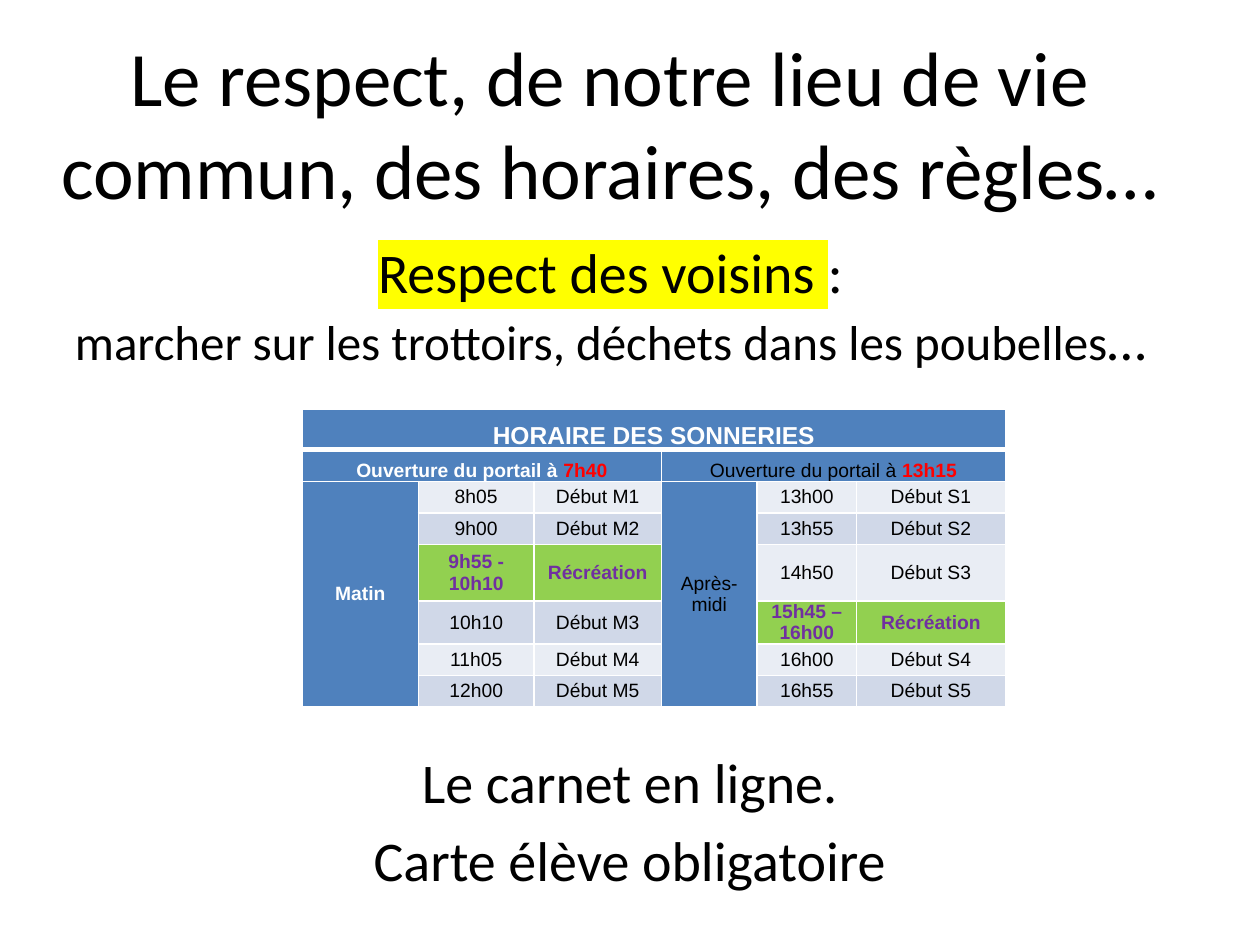
"""Builds the school slide on respect, bell times and rules."""
from lxml import etree
from pptx import Presentation, util as u
from pptx.dml.color import RGBColor
from pptx.enum import text
from pptx.oxml import ns

COLOURS = {
    "ink": "000000", "white": "FFFFFF", "header": "4F81BD", "alert": "FF0000",
    "light": "E9EDF4", "dark": "D0D8E8", "break": "92D050",
    "break_text": "7030A0", "marker": "FFFF00",
}
BREAK = "Récréation"
MORNING = [("8h05", "Début M1"), ("9h00", "Début M2"), ("9h55 - 10h10", BREAK),
           ("10h10", "Début M3"), ("11h05", "Début M4"), ("12h00", "Début M5")]
AFTERNOON = [("13h00", "Début S1"), ("13h55", "Début S2"), ("14h50", "Début S3"),
             ("15h45 – 16h00", BREAK), ("16h00", "Début S4"), ("16h55", "Début S5")]
COLUMNS = [0.92, 0.92, 1.01, 0.76, 0.79, 1.18]
ROWS = [0.32, 0.25, 0.25, 0.25, 0.45, 0.25, 0.25, 0.25]


class Slide:
    """Holds the style and the current page."""

    def __init__(self, deck):
        self.page = deck.slides.add_slide(deck.slide_layouts[5])
        self.body_font, self.table_font = "Calibri", "Arial"

    def place(self, box, left, top, width, height):
        """Moves and sizes a box."""
        box.left, box.top = u.Inches(left), u.Inches(top)
        box.width, box.height = u.Inches(width), u.Inches(height)

    def span(self, para, words, size, font, colour="ink", bold=False, marker=None):
        """Adds one formatted run."""
        span = para.add_run()
        span.text = words
        span.font.size, span.font.bold = u.Pt(size), bold
        span.font.color.rgb = RGBColor.from_string(COLOURS[colour])
        span.font.name = font
        if marker:
            highlight = etree.Element(ns.qn("a:highlight"))
            etree.SubElement(highlight, ns.qn("a:srgbClr"), val=COLOURS[marker])
            span.font._element.find(ns.qn("a:latin")).addprevious(highlight)

    def paragraphs(self, frame, lines):
        """Fills a frame with centred lines of (gap, spans)."""
        frame.word_wrap = True
        frame.auto_size = text.MSO_AUTO_SIZE.NONE
        for index, (gap, spans) in enumerate(lines):
            para = frame.add_paragraph() if index else frame.paragraphs[0]
            para.alignment = text.PP_ALIGN.CENTER
            para.space_before = u.Pt(gap)
            for words, size, marker in spans:
                self.span(para, words, size, self.body_font, marker=marker)

    def title(self, lines, *place):
        """Formats the title placeholder."""
        box = self.page.shapes.title
        self.place(box, *place)
        box.text_frame.vertical_anchor = text.MSO_ANCHOR.MIDDLE
        self.paragraphs(box.text_frame, lines)

    def note(self, lines, top_inset, *place):
        """Adds a text box whose text starts below a top inset."""
        box = self.page.shapes.add_textbox(*map(u.Inches, place))
        box.text_frame.margin_top = u.Inches(top_inset)
        self.paragraphs(box.text_frame, lines)

    def borders(self, cell, bottom):
        """Draws the white borders of a cell."""
        properties = cell._tc.get_or_add_tcPr()
        widths = {"lnL": 1, "lnR": 1, "lnT": 1, "lnB": bottom}
        for index, (side, width) in enumerate(widths.items()):
            line = etree.Element(ns.qn(f"a:{side}"), w=str(u.Pt(width)))
            fill = etree.SubElement(line, ns.qn("a:solidFill"))
            etree.SubElement(fill, ns.qn("a:srgbClr"), val=COLOURS["white"])
            properties.insert(index, line)

    def cell(self, cell, fill, spans, size=11, anchor=text.MSO_ANCHOR.MIDDLE):
        """Fills a cell with spans of (words, colour, bold)."""
        cell.fill.solid()
        cell.fill.fore_color.rgb = RGBColor.from_string(COLOURS[fill])
        cell.vertical_anchor = anchor
        para = cell.text_frame.paragraphs[0]
        para.alignment = text.PP_ALIGN.CENTER
        for words, colour, bold in spans:
            self.span(para, words, size, self.table_font, colour, bold)

    def timetable(self, left, top):
        """Adds the table of bell times."""
        frame = self.page.shapes.add_table(
            len(ROWS), len(COLUMNS), u.Inches(left), u.Inches(top),
            u.Inches(sum(COLUMNS)), u.Inches(sum(ROWS)))
        table = frame.table
        for column, width in zip(table.columns, COLUMNS):
            column.width = u.Inches(width)
        for number, (row, height) in enumerate(zip(table.rows, ROWS)):
            row.height = u.Inches(height)
            for cell in row.cells:
                cell.margin_left = cell.margin_right = u.Inches(0.05)
                cell.margin_top = cell.margin_bottom = 0
                cell.text_frame.paragraphs[0].font.size = u.Pt(11)
                self.borders(cell, 1 if number else 3)

        bottom = text.MSO_ANCHOR.BOTTOM
        table.cell(0, 0).merge(table.cell(0, 5))
        self.cell(table.cell(0, 0), "header",
                  [("HORAIRE DES SONNERIES", "white", True)], 14, bottom)
        halves = [(0, "Matin", "7h40", "white", True, MORNING),
                  (3, "Après-midi", "13h15", "ink", False, AFTERNOON)]
        for first, name, opening, colour, bold, bells in halves:
            table.cell(1, first).merge(table.cell(1, first + 2))
            self.cell(table.cell(1, first), "header",
                      [("Ouverture du portail à ", colour, bold),
                       (opening, "alert", True)], anchor=bottom)
            table.cell(2, first).merge(table.cell(7, first))
            self.cell(table.cell(2, first), "header", [(name, colour, bold)])
            for index, bell in enumerate(bells):
                pause = bell[1] == BREAK
                fill = "break" if pause else ("light", "dark")[index % 2]
                ink = "break_text" if pause else "ink"
                for offset, words in enumerate(bell, 1):
                    self.cell(table.cell(index + 2, first + offset), fill,
                              [(words, ink, pause)])


def main():
    """Builds and saves the deck."""
    deck = Presentation()
    deck.slide_width, deck.slide_height = u.Inches(10), u.Inches(7.5)
    slide = Slide(deck)
    slide.title([
        (0, [("Le respect, de notre lieu de vie commun, des horaires, des règles…", 44, None)]),
        (13, [("Respect des voisins ", 32, "marker"), (":", 32, None)]),
        (0, [("marcher sur les trottoirs, déchets dans les poubelles", 28, None),
             ("…", 32, None)]),
    ], 0.2, 0.71, 9.29, 1.77)
    slide.note([
        (0, [("Le carnet en ligne.", 32, None)]),
        (6.4, [("Carte élève obligatoire", 32, None)]),
    ], 1.32, 1.5, 4.61, 7, 2.89)
    slide.timetable(2.4, 3.25)
    deck.save("out.pptx")


if __name__ == "__main__":
    main()
